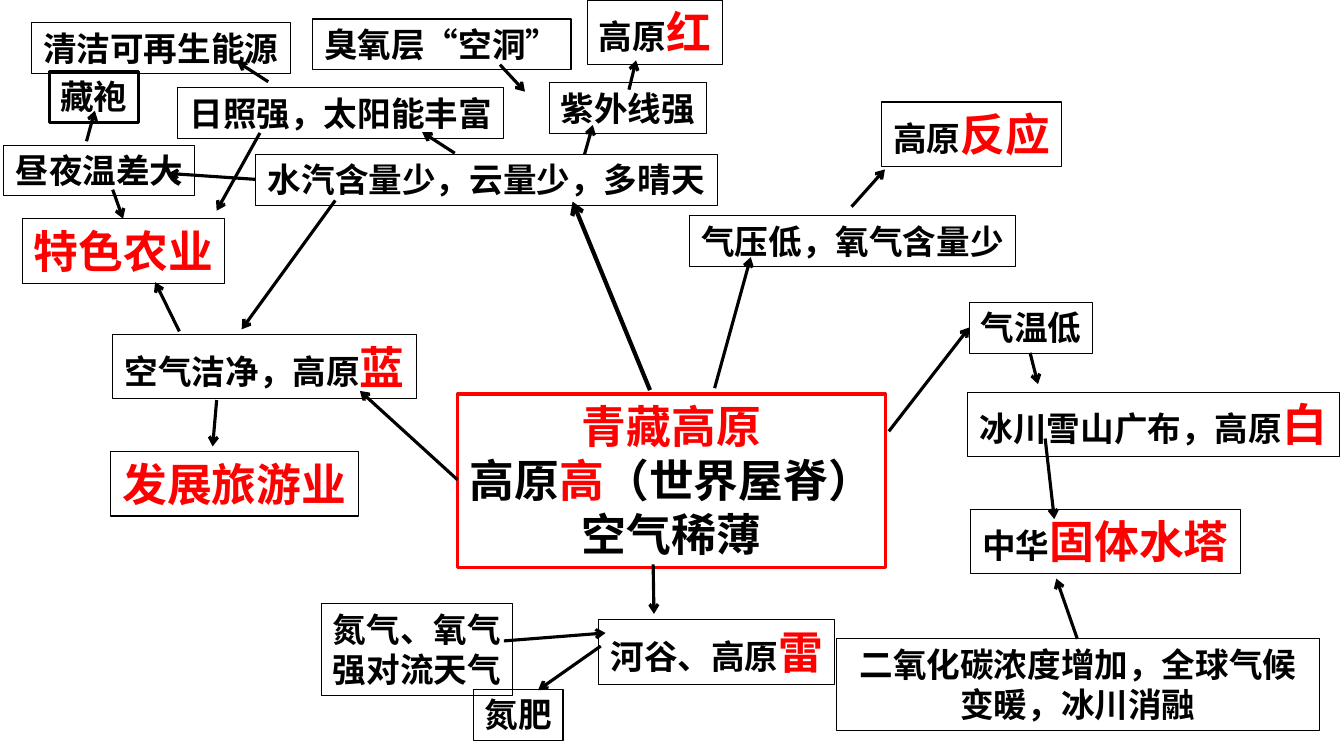
from pptx import Presentation
from pptx.dml.color import RGBColor
from pptx.enum.shapes import MSO_CONNECTOR, MSO_SHAPE
from pptx.enum.text import MSO_ANCHOR, MSO_AUTO_SIZE, PP_ALIGN
from pptx.oxml.ns import qn
from pptx.util import Cm, Pt
from lxml.etree import SubElement

BLACK = RGBColor(0x00, 0x00, 0x00)
RED = RGBColor(0xFF, 0x00, 0x00)
FONT = "Noto Sans CJK SC"
BIG = 32  # size of the red key words
SMALL = 24


def split(line, size):
    """Cut a line at the stars: every second part is a red key word."""
    for i, part in enumerate(line.split("*")):
        if part:
            yield (part, BIG, RED) if i % 2 else (part, size, BLACK)


def add_node(slide, left, top, text, size=SMALL, edge=BLACK, weight=0.75, width=None):
    """Add a framed label, as large as its text unless a width is given."""
    lines = [list(split(line, size)) for line in text.split("\n")]
    spans = [sum(len(part) * pts for part, pts, _ in line) for line in lines]
    tall = sum(max(pts for _, pts, _ in line) for line in lines)
    if width:
        tall *= 2  # the label wraps onto two lines
    wide = width or 0.54 + 0.0356 * max(spans)
    node = slide.shapes.add_shape(
        MSO_SHAPE.RECTANGLE, Cm(left), Cm(top), Cm(wide), Cm(0.25 + 0.0429 * tall))
    node.shadow.inherit = False
    node.fill.background()
    node.line.color.rgb = edge
    node.line.width = Pt(weight)

    frame = node.text_frame
    frame.word_wrap = width is not None
    frame.auto_size = MSO_AUTO_SIZE.SHAPE_TO_FIT_TEXT
    frame.vertical_anchor = MSO_ANCHOR.TOP
    for i, line in enumerate(lines):
        para = frame.add_paragraph() if i else frame.paragraphs[0]
        para.alignment = PP_ALIGN.CENTER
        for part, pts, color in line:
            run = para.add_run()
            run.text = part
            run.font.size = Pt(pts)
            run.font.bold = True
            run.font.color.rgb = color
            run.font.name = FONT
            SubElement(run.font._element, qn("a:ea"), typeface=FONT)


def add_arrow(slide, x1, y1, x2, y2, weight=2.25):
    arrow = slide.shapes.add_connector(
        MSO_CONNECTOR.STRAIGHT, Cm(x1), Cm(y1), Cm(x2), Cm(y2))
    arrow.line.color.rgb = BLACK
    arrow.line.width = Pt(weight)
    props = arrow._element.spPr
    SubElement(props.find(qn("a:ln")), qn("a:tailEnd"), type="arrow")
    SubElement(props, qn("a:effectLst"))


def fill_box(slide, left, top, nodes, arrows):
    """Place labels and arrows from the top left corner of a region."""
    for x, y, text in nodes:
        add_node(slide, left + x, top + y, text)
    for x1, y1, x2, y2 in arrows:
        add_arrow(slide, left + x1, top + y1, left + x2, top + y2)


# Centre: the plateau, with arrows out to every branch
def draw_core(slide, left, top):
    add_node(slide, left, top, "*青藏高原*\n高原*高*（世界屋脊）\n空气稀薄",
             size=BIG, edge=RED, weight=2.25)
    add_arrow(slide, left + 4.85, top - 0.1, left + 2.9, top - 4.85, weight=3)
    fill_box(slide, left, top, [], [
        (6.48, -0.15, 7.39, -3.45),
        (10.87, 0.94, 12.9, -1.68),
        (0, 2.16, -2.46, -0.08),
        (4.93, 4.29, 4.95, 5.54),
    ])


# Top left: little vapour, strong sun, farming
def draw_sun(slide, left, top):
    add_node(slide, left + 1.24, top + 1.8, "藏袍", weight=2.25)
    fill_box(slide, left, top, [
        (6.43, 3.89, "水汽含量少，云量少，多晴天"),
        (4.47, 2.21, "日照强，太阳能丰富"),
        (13.84, 2.08, "紫外线强"),
        (14.81, 0, "高原*红*"),
        (7.87, 0.48, "臭氧层“空洞”"),
        (0.79, 0.58, "清洁可再生能源"),
        (0.1, 3.66, "昼夜温差大"),
        (0.56, 5.51, "*特色农业*"),
    ], [
        (11.46, 3.86, 10.64, 3.33),
        (14.73, 3.89, 14.94, 3.15),
        (15.85, 2.26, 16.03, 1.52),
        (6.43, 4.52, 4.24, 4.37),
        (2.18, 3.56, 2.39, 2.79),
        (12.6, 1.63, 13.23, 2.31),
        (2.84, 4.78, 3.1, 5.51),
        (6.76, 2.06, 5.97, 1.55),
        (6.55, 3.35, 5.46, 5.31),
    ])


# Left: clean air and tourism
def draw_air(slide, left, top):
    fill_box(slide, left, top, [
        (0.05, 0, "空气洁净，高原*蓝*"),
        (0, 2.95, "*发展旅游业*"),
    ], [
        (5.66, -3.38, 3.3, -0.13),
        (1.73, -0.08, 1.12, -1.32),
        (2.67, 1.65, 2.57, 2.82),
    ])


# Top right: low pressure
def draw_press(slide, left, top):
    fill_box(slide, left, top, [
        (0, 2.87, "气压低，氧气含量少"),
        (4.85, 0, "高原*反应*"),
    ], [(4.09, 2.64, 4.93, 1.7)])


# Right: cold, glaciers and warming
def draw_cold(slide, left, top):
    add_node(slide, left, top + 8.48, "二氧化碳浓度增加，全球气候变暖，冰川消融", width=12.17)
    fill_box(slide, left, top, [
        (3.35, 0, "气温低"),
        (3.3, 2.26, "冰川雪山广布，高原*白*"),
        (3.38, 5.21, "中华*固体水塔*"),
    ], [
        (4.88, 1.27, 5.08, 2.06),
        (5.26, 3.43, 5.49, 5.46),
        (6.07, 8.48, 5.54, 6.96),
    ])


# Bottom: valley thunder and nitrogen
def draw_storm(slide, left, top):
    fill_box(slide, left, top, [
        (0, 0, "氮气、氧气\n强对流天气"),
        (6.99, 0.41, "河谷、高原*雷*"),
        (3.84, 2.16, "氮肥"),
    ], [
        (7.04, 1.07, 5.46, 2.18),
        (4.6, 0.94, 7.16, 0.74),
    ])


def main():
    deck = Presentation()
    deck.slide_width, deck.slide_height = Cm(33.87), Cm(19.05)
    slide = deck.slides.add_slide(deck.slide_layouts.get_by_name("Blank"))
    draw_core(slide, 11.53, 9.93)
    draw_sun(slide, 0, 0)
    draw_air(slide, 2.79, 8.43)
    draw_press(slide, 17.37, 2.57)
    draw_cold(slide, 21.08, 7.62)
    draw_storm(slide, 8.1, 15.21)
    deck.save("out.pptx")


if __name__ == "__main__":
    main()
